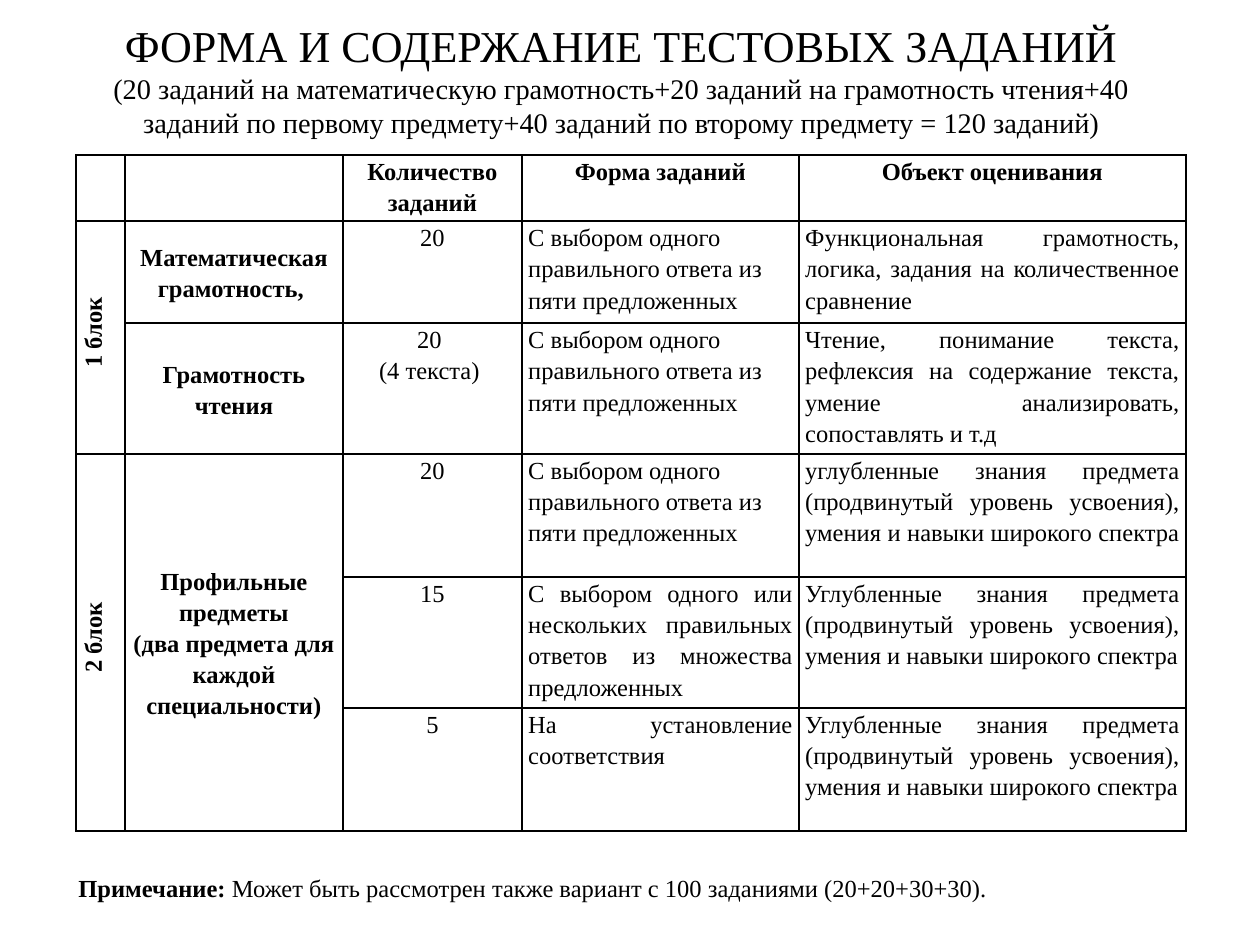
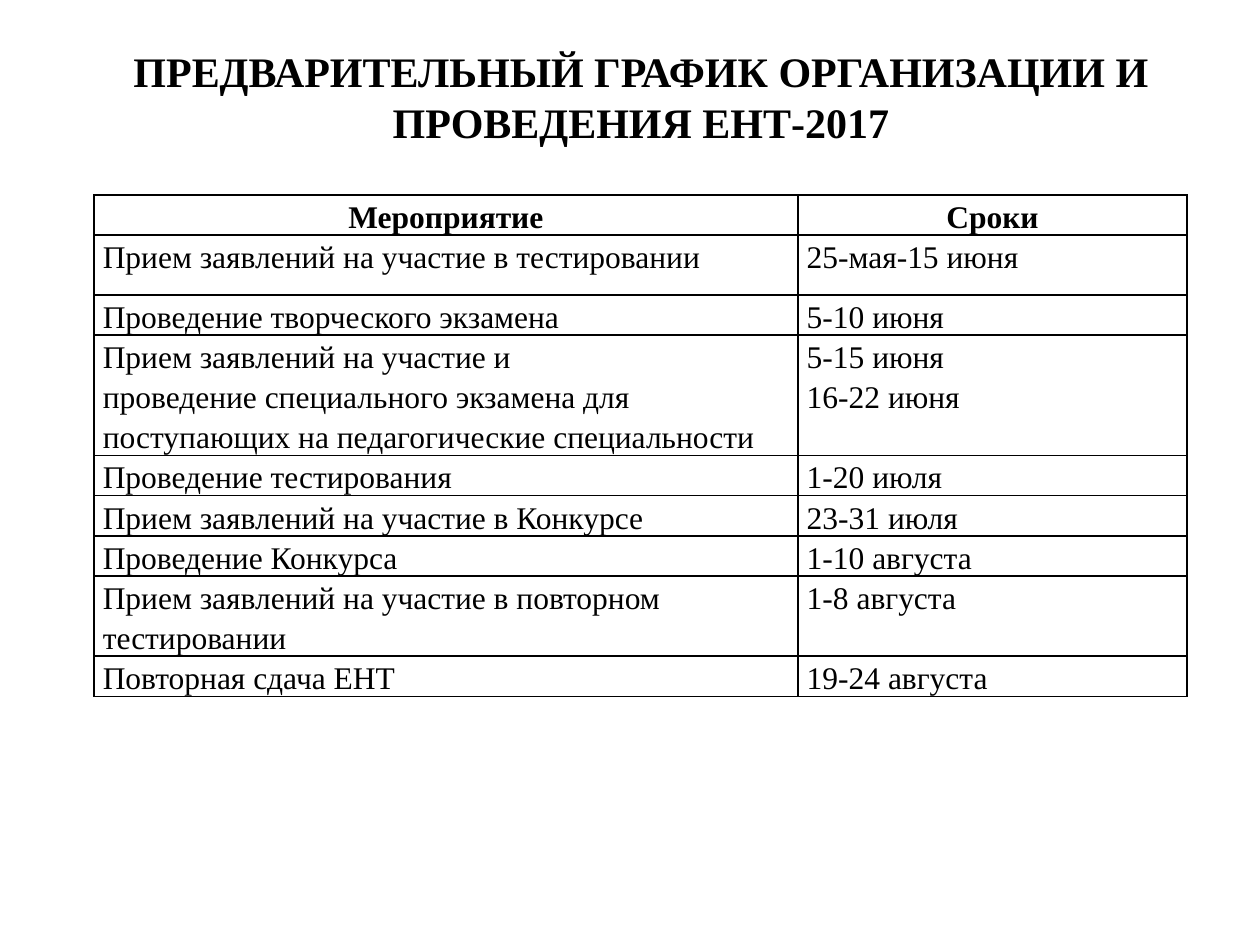
from copy import deepcopy

from pptx import Presentation
from pptx.dml.color import RGBColor
from pptx.enum.text import MSO_ANCHOR, MSO_AUTO_SIZE, PP_ALIGN
from pptx.oxml.ns import qn
from pptx.util import Emu, Inches, Pt
from lxml import etree

LEFT, CENTER, JUSTIFY = PP_ALIGN.LEFT, PP_ALIGN.CENTER, PP_ALIGN.JUSTIFY
TOP, MIDDLE = MSO_ANCHOR.TOP, MSO_ANCHOR.MIDDLE
NO_FIT, GROW = MSO_AUTO_SIZE.NONE, MSO_AUTO_SIZE.SHAPE_TO_FIT_TEXT
BLACK = RGBColor(0x00, 0x00, 0x00)
FONT = "Times New Roman"
TITLE_ONLY = 5

ONE_ANSWER = "С выбором одного правильного ответа из пяти предложенных"
DEEP_KNOWLEDGE = ("глубленные знания предмета (продвинутый уровень усвоения), "
                  "умения и навыки широкого спектра")
TASK_ROWS = [
    ("", "", "Количество заданий", "Форма заданий", "Объект оценивания"),
    ("1 блок", "Математическая грамотность, ", "20", ONE_ANSWER,
     "Функциональная грамотность, логика, задания на количественное сравнение"),
    ("", "Грамотность чтения", "20 \n(4 текста) ", ONE_ANSWER,
     "Чтение, понимание текста, рефлексия на содержание текста, "
     "умение анализировать, сопоставлять и т.д"),
    ("2 блок", "Профильные предметы\n(два предмета для каждой специальности)",
     "20", ONE_ANSWER, "у" + DEEP_KNOWLEDGE + " "),
    ("", "", "15", "С выбором одного или нескольких правильных ответов "
     "из множества предложенных", "У" + DEEP_KNOWLEDGE),
    ("", "", "5", "На установление соответствия", "У" + DEEP_KNOWLEDGE),
]
SCHEDULE_ROWS = [
    ("Мероприятие", "Сроки"),
    ("Прием заявлений на участие в тестировании", "25-мая-15 июня"),
    ("Проведение творческого экзамена", "5-10 июня"),
    ("Прием заявлений на участие и\nпроведение специального экзамена для "
     "поступающих на педагогические специальности", "5-15 июня\n16-22 июня"),
    ("Проведение тестирования", "1-20 июля"),
    ("Прием заявлений на участие в Конкурсе", "23-31 июля"),
    ("Проведение Конкурса", "1-10 августа"),
    ("Прием заявлений на участие в повторном тестировании", "1-8 августа"),
    ("Повторная сдача ЕНТ", "19-24 августа"),
]


def px(n):
    return Emu(round(n * 914400 / 126))


def add_run(p, text, size=14, bold=False):
    r = p.add_run()
    r.text = text
    r.font.name, r.font.size, r.font.bold = FONT, Pt(size), bold
    r.font.color.rgb = BLACK
    return r


def write(tf, text, align=LEFT, spacing=1.15, **font):
    """Write one paragraph per line of text and return the last one."""
    for i, line in enumerate(text.split("\n")):
        p = tf.add_paragraph() if i else tf.paragraphs[0]
        p.alignment, p.line_spacing = align, spacing
        add_run(p, line, **font)
    return p


def set_title(slide, box, text, subtitle="", size=24, sub_size=16.2, bold=False):
    title = slide.shapes.title
    title.left, title.top, title.width, title.height = map(px, box)
    tf = title.text_frame
    tf.auto_size, tf.vertical_anchor = NO_FIT, MIDDLE
    p = write(tf, text, CENTER, 1.0, size=size, bold=bold)
    if subtitle:
        # The line break carries the heading's size
        br = p._p.add_br()
        br.append(deepcopy(p.runs[0]._r.rPr))
        add_run(p, subtitle, sub_size)


def set_borders(cell):
    tc_pr = cell._tc.get_or_add_tcPr()
    for side in ("a:lnL", "a:lnR", "a:lnT", "a:lnB"):
        ln = etree.SubElement(tc_pr, qn(side), w=str(Pt(1)))
        fill = etree.SubElement(ln, qn("a:solidFill"))
        etree.SubElement(fill, qn("a:srgbClr"), val=str(BLACK))


def add_grid(slide, x, y, widths, heights, inset):
    """Add a plain black-ruled table with its corner at x, y."""
    table = slide.shapes.add_table(
        len(heights), len(widths), px(x), px(y),
        px(sum(widths)), px(sum(heights))).table
    table.first_row = table.horz_banding = False
    for column, width in zip(table.columns, widths):
        column.width = px(width)
    for row, height in zip(table.rows, heights):
        row.height = px(height)
    for cell in table.iter_cells():
        set_borders(cell)
        cell.fill.background()
        cell.margin_left = cell.margin_right = Inches(inset)
        cell.margin_top = cell.margin_bottom = 0
    return table


def add_task_table(slide, x, y):
    table = add_grid(slide, x, y, (49, 218, 179, 277, 387),
                     (66, 102, 131, 123, 131, 123), 0.05)
    # Blocks span their rows
    for first, last, col in ((1, 2, 0), (3, 5, 0), (3, 5, 1)):
        table.cell(first, col).merge(table.cell(last, col))
    for i, row in enumerate(TASK_ROWS):
        form_align = JUSTIFY if i >= 4 else LEFT
        aligns = (CENTER, CENTER, CENTER, form_align, JUSTIFY)
        for j, text in enumerate(row):
            if not text:
                continue
            cell = table.cell(i, j)
            cell.vertical_anchor = MIDDLE if j == 1 else TOP
            p = write(cell.text_frame, text, aligns[j] if i else CENTER,
                      bold=i == 0 or j < 2)
            if j == 0:
                cell._tc.tcPr.set("vert", "vert270")
                p._p.get_or_add_pPr().set("marL", str(px(10)))


def add_schedule_table(slide, x, y):
    line = 40
    heights = [line * n for n in (1, 1.5, 1, 3, 1, 1, 1, 2, 1)]
    table = add_grid(slide, x, y, (704, 389), heights, 0.07)
    for i, row in enumerate(SCHEDULE_ROWS):
        for j, text in enumerate(row):
            write(table.cell(i, j).text_frame, text, LEFT if i else CENTER,
                  size=18, bold=i == 0)


def add_note(slide, box, label, text):
    tf = slide.shapes.add_textbox(*map(px, box)).text_frame
    tf.word_wrap, tf.auto_size = True, GROW
    p = write(tf, label, JUSTIFY, bold=True)
    add_run(p, text)


def build_tasks_slide(slide):
    set_title(slide, (54, 0, 1134, 158), "ФОРМА И СОДЕРЖАНИЕ ТЕСТОВЫХ ЗАДАНИЙ",
              "(20 заданий на математическую грамотность+20 заданий на "
              "грамотность чтения+40 заданий по первому предмету+40 заданий "
              "по второму предмету = 120 заданий)", size=25.2)
    add_task_table(slide, 76, 155)
    add_note(slide, (66, 862, 1121, 44), "Примечание:",
             " Может быть рассмотрен также вариант с 100 заданиями (20+20+30+30).")


def build_schedule_slide(slide):
    set_title(slide, (74, 17, 1134, 158),
              "ПРЕДВАРИТЕЛЬНЫЙ ГРАФИК ОРГАНИЗАЦИИ И ПРОВЕДЕНИЯ ЕНТ-2017",
              bold=True)
    add_schedule_table(slide, 94, 195)


def main():
    prs = Presentation()
    prs.slide_width, prs.slide_height = px(1260), px(945)
    for build in (build_tasks_slide, build_schedule_slide):
        build(prs.slides.add_slide(prs.slide_layouts[TITLE_ONLY]))
    prs.save("out.pptx")


if __name__ == "__main__":
    main()
